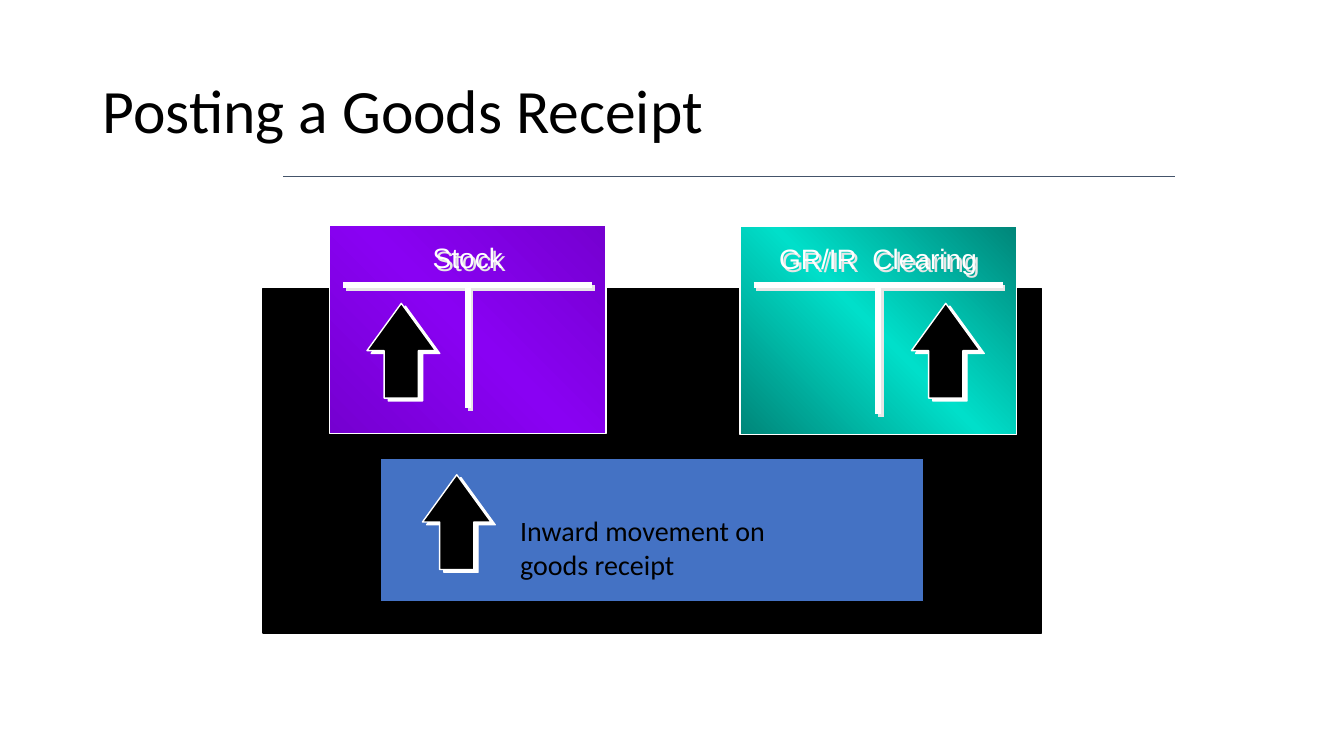
"""Builds the slide on posting a goods receipt to two T-accounts."""
import dataclasses

import lxml.etree
import pptx
import pptx.dml.color
import pptx.enum.dml
import pptx.enum.shapes
import pptx.enum.text
import pptx.oxml.ns
import pptx.util

Inches = pptx.util.Inches
Pt = pptx.util.Pt
Shapes = pptx.enum.shapes.MSO_SHAPE
Align = pptx.enum.text.PP_ALIGN

COLORS = {
    "black": "000000",
    "white": "FFFFFF",
    "blue": "4472C4",
    "slate": "44546A",
    "pale": "E7E6E6",
    "teal": "00DFCA",
    "purple": "8901F3",
}


@dataclasses.dataclass(frozen=True)
class Shadow:
    color: str
    distance: float
    angle: int


@dataclasses.dataclass(frozen=True)
class Account:
    name: str
    color: str
    edge_shade: int
    left: float
    top: float
    label_width: float
    stem_bottom: float
    arrow_left: float


PANEL_WIDTH, PANEL_HEIGHT = 2.74, 2.06
BAR_WIDTH, BAR_TOP = 2.47, 2.83
LABEL_SHADOW = Shadow("pale", 2.8, 45)
ARROW_SHADOW = Shadow("white", 3.6, 34)
ACCOUNTS = [
    Account("GR/IR  Clearing", "teal", 31, 7.34, 2.25, 3.13, 4.11, 9.04),
    Account("Stock", "purple", 70, 3.27, 2.24, 2.7, 4.05, 3.64),
]


def rgb(name: str) -> pptx.dml.color.RGBColor:
    return pptx.dml.color.RGBColor.from_string(COLORS[name])


def add_node(parent, tag: str, **attributes):
    node = lxml.etree.SubElement(parent, pptx.oxml.ns.qn(tag))
    for key, value in attributes.items():
        node.set(key, str(value))
    return node


def set_shadow(item, shadow: Shadow | None) -> None:
    effects = add_node(item._element.spPr, "a:effectLst")
    if shadow:
        outer = add_node(effects, "a:outerShdw", dist=Pt(shadow.distance),
                         dir=shadow.angle * 60000, algn="ctr", rotWithShape=0)
        add_node(outer, "a:srgbClr", val=COLORS[shadow.color])


def add_block(page, kind, left: float, top: float, width: float, height: float,
              fill: str, line: str, shadow: Shadow | None = None):
    block = page.shapes.add_shape(
        kind, Inches(left), Inches(top), Inches(width), Inches(height))
    block.fill.solid()
    block.fill.fore_color.rgb = rgb(fill)
    block.line.color.rgb = rgb(line)
    block.line.width = Pt(1)
    set_shadow(block, shadow)
    return block


def add_line(page, start: tuple[float, float], end: tuple[float, float],
             color: str, width: float, shadow: Shadow | None = None) -> None:
    line = page.shapes.add_connector(
        pptx.enum.shapes.MSO_CONNECTOR.STRAIGHT,
        *(Inches(value) for value in (*start, *end)))
    line.line.color.rgb = rgb(color)
    line.line.width = Pt(width)
    set_shadow(line, shadow)


def add_text(page, text: str, left: float, top: float, width: float, height: float,
             size: float, font: str = "Calibri", color: str = "black",
             align=Align.LEFT, before: int = 0, shadow: Shadow | None = None):
    box = page.shapes.add_textbox(
        Inches(left), Inches(top), Inches(width), Inches(height))
    box.text_frame.word_wrap = True
    para = box.text_frame.paragraphs[0]
    para.text = text
    para.alignment = align
    para.font.size = Pt(size)
    para.font.name = font
    para.font.color.rgb = rgb(color)
    if before:
        para.space_before = Pt(0)
        spacing = para._p.pPr.find(pptx.oxml.ns.qn("a:spcBef"))
        spacing.clear()
        add_node(spacing, "a:spcPct", val=before * 1000)
        box.text_frame.auto_size = pptx.enum.text.MSO_AUTO_SIZE.SHAPE_TO_FIT_TEXT
    if shadow:
        set_shadow(box, shadow)
    return box


def add_arrow(page, left: float, top: float) -> None:
    arrow = add_block(page, Shapes.UP_ARROW, left, top, 0.68, 0.94,
                      "black", "white", ARROW_SHADOW)
    arrow.adjustments[0] = 0.5
    arrow.adjustments[1] = 0.69


def set_gradient(panel, color: str, edge_shade: int) -> None:
    panel.fill.gradient()
    panel.fill.gradient_angle = 45
    stops = panel._element.spPr.find(".//" + pptx.oxml.ns.qn("a:gsLst"))
    stops.clear()
    for position in (0, 50, 100):
        stop = add_node(stops, "a:gs", pos=position * 1000)
        tint = add_node(stop, "a:srgbClr", val=COLORS[color])
        if position != 50:
            add_node(tint, "a:shade", val=edge_shade * 1000)


def add_account(page, account: Account) -> None:
    center = account.left + PANEL_WIDTH / 2
    panel = add_block(page, Shapes.RECTANGLE, account.left, account.top,
                      PANEL_WIDTH, PANEL_HEIGHT, account.color, "white")
    set_gradient(panel, account.color, account.edge_shade)
    add_text(page, account.name, center - account.label_width / 2, account.top + 0.1,
             account.label_width, 0.44, 20, "Arial", "white", Align.CENTER, 50,
             LABEL_SHADOW)
    add_line(page, (center - BAR_WIDTH / 2, BAR_TOP), (center + BAR_WIDTH / 2, BAR_TOP),
             "white", 4, LABEL_SHADOW)
    add_line(page, (center, BAR_TOP + 0.02), (center, account.stem_bottom),
             "white", 4, LABEL_SHADOW)
    add_arrow(page, account.arrow_left, 3.01)


def main() -> None:
    deck = pptx.Presentation()
    deck.slide_width, deck.slide_height = Inches(13.33), Inches(7.5)
    page = deck.slides.add_slide(deck.slide_layouts[6])

    title = add_text(page, "Posting a Goods Receipt", 0.92, 0.4, 11.5, 1.45, 44)
    title.text_frame.vertical_anchor = pptx.enum.text.MSO_ANCHOR.MIDDLE
    title.text_frame.paragraphs[0].line_spacing = 0.9
    add_line(page, (2.81, 1.75), (11.65, 1.75), "slate", 1)

    add_block(page, Shapes.RECTANGLE, 2.61, 2.86, 7.72, 3.42, "black", "black")
    add_block(page, Shapes.RECTANGLE, 3.77, 4.55, 5.39, 1.42, "blue", "black")
    for account in ACCOUNTS:
        add_account(page, account)
    add_arrow(page, 4.19, 4.71)
    add_text(page, "Inward movement on \vgoods receipt", 5.06, 5.05, 4.17, 0.77, 20,
             before=100)

    deck.save("out.pptx")


if __name__ == "__main__":
    main()
